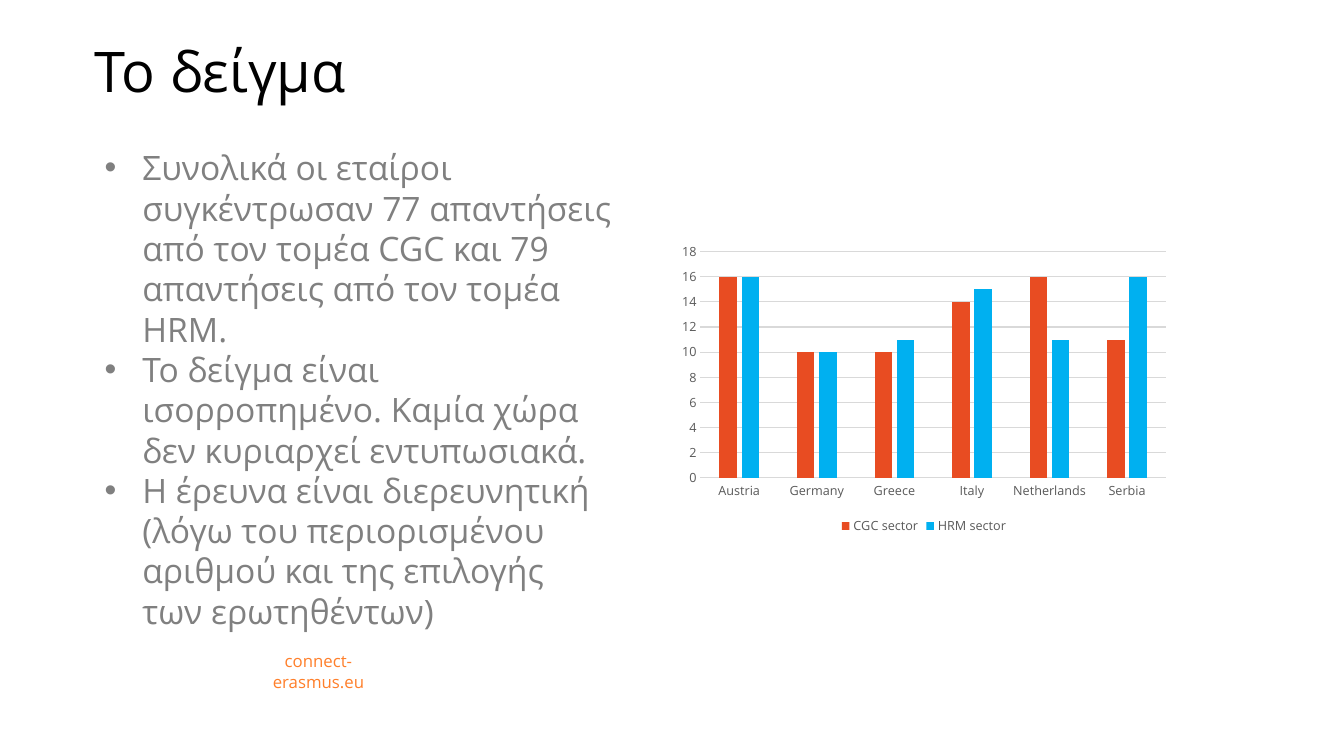
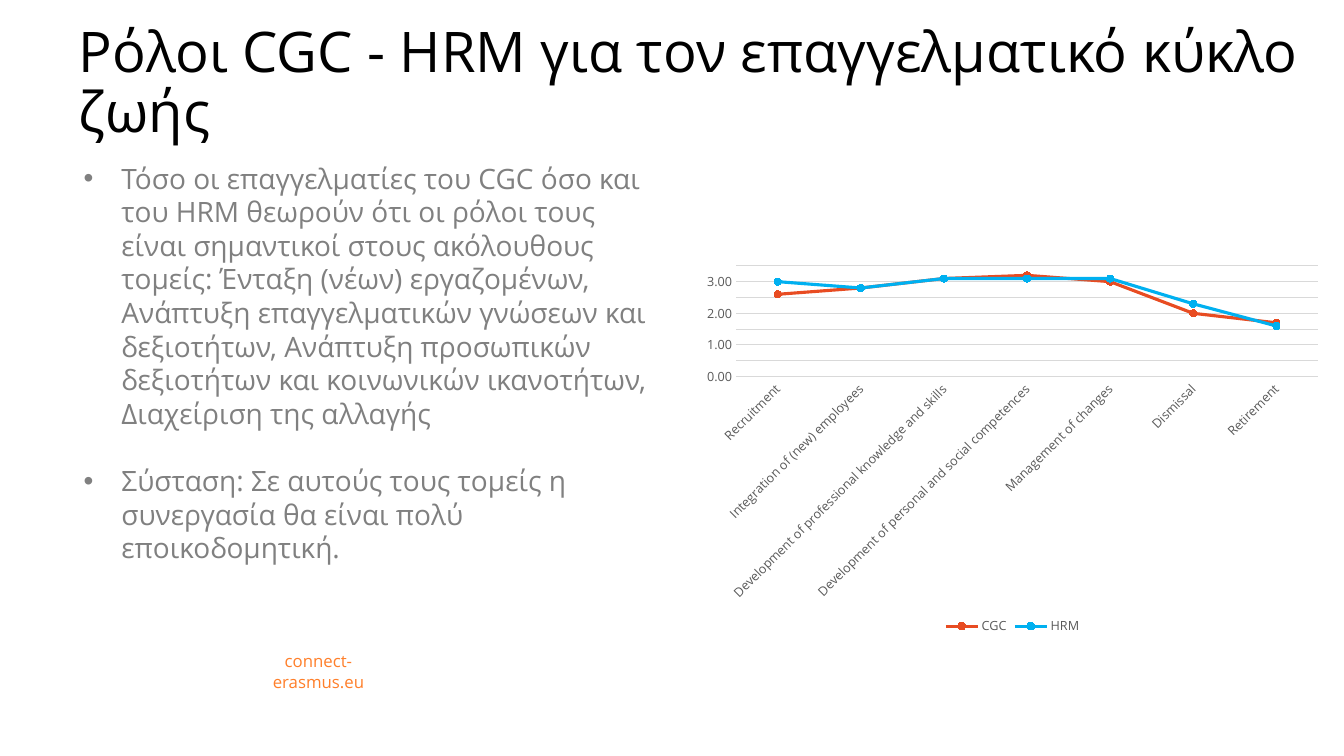
"""Build two survey slides, each with a title, a bullet list and a chart."""
from lxml import etree
from pptx import Presentation
from pptx.chart.data import CategoryChartData
from pptx.dml.color import RGBColor
from pptx.enum.chart import XL_CHART_TYPE as Kind, XL_LEGEND_POSITION as Place
from pptx.enum.chart import XL_MARKER_STYLE as Mark, XL_TICK_MARK as Tick
from pptx.enum.text import MSO_ANCHOR as Anchor, MSO_AUTO_SIZE as Fit, PP_ALIGN as Align
from pptx.oxml.ns import qn
from pptx.util import Pt

FACE = "Open Sans"
BLACK = RGBColor(0x00, 0x00, 0x00)
GREY = RGBColor(0x80, 0x80, 0x80)
DARK = RGBColor(0x59, 0x59, 0x59)
RULE = RGBColor(0xD9, 0xD9, 0xD9)
ORANGE = RGBColor(0xFF, 0x7F, 0x2A)
TONES = [RGBColor(0xE8, 0x4C, 0x22), RGBColor(0x00, 0xB0, 0xF0)]
INDENT = Pt(27)

SITE = "connect-erasmus.eu"
SITE_BOX = (164, 468.5, 127, 22)

SLIDES = [
    {
        "title": "Το δείγμα",
        "title_box": (60.5, 24.5, 334, 54),
        "points": [
            "Συνολικά οι εταίροι συγκέντρωσαν 77 απαντήσεις από τον τομέα CGC "
            "και 79 απαντήσεις από τον τομέα HRM.",
            "Το δείγμα είναι ισορροπημένο. Καμία χώρα δεν κυριαρχεί εντυπωσιακά.",
            "Η έρευνα είναι διερευνητική (λόγω του περιορισμένου αριθμού και της "
            "επιλογής των ερωτηθέντων)",
        ],
        "body_box": (67.5, 101.5, 376.5, 337),
        "size": 24,
        "gap": 0,
        "chart": {
            "kind": Kind.COLUMN_CLUSTERED,
            "box": (480, 169, 360, 216),
            "cats": ["Austria", "Germany", "Greece", "Italy", "Netherlands", "Serbia"],
            "rows": [
                ("CGC sector", [16, 10, 10, 14, 16, 11]),
                ("HRM sector", [16, 10, 11, 15, 11, 16]),
            ],
            "top": 18,
            "step": 2,
            "format": "General",
        },
    },
    {
        "title": "Ρόλοι CGC - HRM για τον επαγγελματικό κύκλο ζωής",
        "title_box": (49, -8, 894, 115),
        "points": [
            "Τόσο οι επαγγελματίες του CGC όσο και του HRM θεωρούν ότι οι ρόλοι "
            "τους είναι σημαντικοί στους ακόλουθους τομείς: Ένταξη (νέων) "
            "εργαζομένων, Ανάπτυξη επαγγελματικών γνώσεων και δεξιοτήτων, Ανάπτυξη "
            "προσωπικών δεξιοτήτων και κοινωνικών ικανοτήτων, Διαχείριση της αλλαγής",
            "Σύσταση: Σε αυτούς τους τομείς η συνεργασία θα είναι πολύ "
            "εποικοδομητική.",
        ],
        "body_box": (52.5, 111.5, 427, 357),
        "size": 20,
        "gap": 24,
        "chart": {
            "kind": Kind.LINE_MARKERS,
            "box": (496, 184.5, 454.5, 272),
            "cats": [
                "Recruitment",
                "Integration of (new) employees",
                "Development of professional knowledge and skills",
                "Development of personal and social competences",
                "Management of changes",
                "Dismissal",
                "Retirement",
            ],
            "rows": [
                ("CGC", [2.6, 2.8, 3.1, 3.2, 3, 2, 1.7]),
                ("HRM", [3, 2.8, 3.1, 3.1, 3.1, 2.3, 1.6]),
            ],
            "top": 3.5,
            "step": 0.5,
            "format": "###0.00",
            "turn": -45,
        },
    },
]


def place(shape, box):
    shape.left, shape.top, shape.width, shape.height = map(Pt, box)


def style(font, size, tone):
    font.name, font.size, font.color.rgb = FACE, Pt(size), tone


def write(para, text, size, tone):
    run = para.add_run()
    run.text = text
    style(run.font, size, tone)


def add_title(slide, text, box):
    shape = slide.shapes.title
    place(shape, box)
    frame = shape.text_frame
    frame.auto_size, frame.vertical_anchor = Fit.NONE, Anchor.BOTTOM
    para = frame.paragraphs[0]
    para.alignment, para.line_spacing = Align.LEFT, 0.9
    write(para, text, 40, BLACK)


def add_list(slide, points, box, size, gap):
    shape = slide.placeholders[1]
    place(shape, box)
    frame = shape.text_frame
    frame.auto_size = Fit.NONE
    for i, point in enumerate(points):
        para = frame.add_paragraph() if i else frame.paragraphs[0]
        para.space_before = Pt(gap if i else 0)
        props = para._p.get_or_add_pPr()
        props.set("marL", str(INDENT))
        props.set("indent", str(-INDENT))
        etree.SubElement(props, qn("a:buFont")).set("typeface", "Arial")
        etree.SubElement(props, qn("a:buChar")).set("char", "•")
        write(para, point, size, GREY)


def add_site(slide):
    frame = slide.shapes.add_textbox(*map(Pt, SITE_BOX)).text_frame
    frame.word_wrap, frame.vertical_anchor = True, Anchor.MIDDLE
    frame.margin_left = frame.margin_right = Pt(10)
    para = frame.paragraphs[0]
    para.alignment = Align.CENTER
    write(para, SITE, 12, ORANGE)


def style_axes(chart, top, step, form, turn):
    cat, val = chart.category_axis, chart.value_axis
    for axis in (cat, val):
        axis.major_tick_mark = axis.minor_tick_mark = Tick.NONE
        style(axis.tick_labels.font, 9, DARK)
    cat.has_major_gridlines, val.has_major_gridlines = False, True
    for line in (cat.format.line, val.major_gridlines.format.line):
        line.color.rgb, line.width = RULE, Pt(0.75)
    val.format.line.fill.background()
    val.minimum_scale, val.maximum_scale, val.major_unit = 0, top, step
    val.tick_labels.number_format = form
    val.tick_labels.number_format_is_linked = False
    if turn:
        body = cat._element.find(qn("c:txPr")).find(qn("a:bodyPr"))
        body.set("rot", str(turn * 60000))


def add_graph(slide, kind, box, cats, rows, top, step, format, turn=0):
    data = CategoryChartData()
    data.categories = cats
    for name, vals in rows:
        data.add_series(name, vals)
    chart = slide.shapes.add_chart(kind, *map(Pt, box), data).chart
    style(chart.font, 10, BLACK)
    chart.has_title, chart.has_legend = False, True
    chart.legend.position, chart.legend.include_in_layout = Place.BOTTOM, False
    style(chart.legend.font, 9, DARK)
    style_axes(chart, top, step, format, turn)
    plot = chart.plots[0]
    plot.vary_by_categories = False
    if kind == Kind.COLUMN_CLUSTERED:
        plot.gap_width, plot.overlap = 219, -27
    for row, tone in zip(plot.series, TONES):
        if kind == Kind.COLUMN_CLUSTERED:
            parts = [row.format]
        else:
            row.smooth = False
            row.format.line.color.rgb, row.format.line.width = tone, Pt(2.25)
            row.marker.style, row.marker.size = Mark.CIRCLE, 5
            row.marker.format.line.color.rgb = tone
            parts = [row.marker.format]
        for part in parts:
            part.fill.solid()
            part.fill.fore_color.rgb = tone


def main():
    deck = Presentation()
    deck.slide_width, deck.slide_height = Pt(960), Pt(540)
    for item in SLIDES:
        slide = deck.slides.add_slide(deck.slide_layouts[1])
        add_title(slide, item["title"], item["title_box"])
        add_list(slide, item["points"], item["body_box"], item["size"], item["gap"])
        add_site(slide)
        add_graph(slide, **item["chart"])
    deck.save("out.pptx")


if __name__ == "__main__":
    main()
